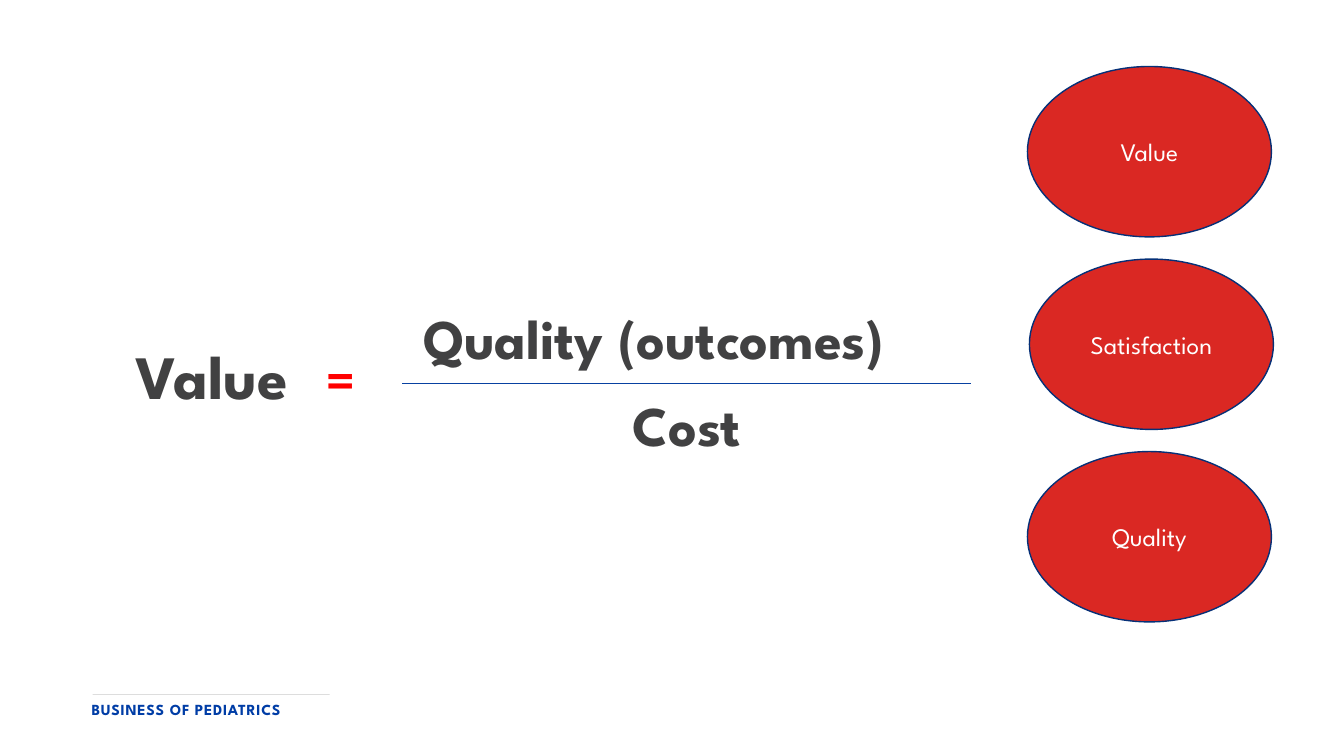
from lxml.etree import SubElement
from pptx import Presentation
from pptx.dml.color import RGBColor
from pptx.enum.shapes import MSO_CONNECTOR, MSO_SHAPE
from pptx.enum.text import MSO_ANCHOR, MSO_AUTO_SIZE, PP_ALIGN
from pptx.oxml.ns import qn
from pptx.util import Inches, Pt

GRAY = RGBColor(0x41, 0x41, 0x42)
BLUE = RGBColor(0x00, 0x3D, 0xA6)
RULE_BLUE = RGBColor(0x08, 0x41, 0xA1)
NAVY = RGBColor(0x06, 0x30, 0x77)
RED = RGBColor(0xDA, 0x28, 0x23)
BRIGHT_RED = RGBColor(0xFF, 0x00, 0x00)
WHITE = RGBColor(0xFF, 0xFF, 0xFF)
SPARTAN = "League Spartan"

LABELS = [
    ("BUSINESS OF PEDIATRICS", (0.81, 6.9, 4.74, 0.29), PP_ALIGN.LEFT, 50,
     {"size": Pt(11), "name": SPARTAN, "bold": True}, BLUE),
    ("Value", (1.25, 3.3, 2.02, 0.84), PP_ALIGN.LEFT, 0,
     {"size": Pt(44), "name": SPARTAN, "bold": True}, GRAY),
    ("Quality (outcomes)", (4.1, 2.96, 5.42, 0.77), PP_ALIGN.LEFT, 0,
     {"size": Pt(40), "name": SPARTAN, "bold": True}, GRAY),
    ("Cost", (4.1, 3.83, 5.42, 0.77), PP_ALIGN.CENTER, 0,
     {"size": Pt(40), "name": SPARTAN, "bold": True}, GRAY),
    ("=", (3.14, 3.36, 0.6, 0.77), PP_ALIGN.LEFT, 0,
     {"size": Pt(40), "name": "Calibri", "bold": True}, BRIGHT_RED),
]
RULES = [
    (0.92, 3.27, 6.89, GRAY, 0.25, 50),
    (3.99, 9.63, 3.8, RULE_BLUE, 0.5, 100),
]
GOALS = [("Value", 10.19), ("Satisfaction", 10.21), ("Quality", 10.19)]
GOAL_FORMAT = {"size": Pt(18), "name": SPARTAN, "bold": False}
GOAL_TOP, GOAL_STEP, GOAL_WIDTH, GOAL_HEIGHT = 0.66, 1.91, 2.42, 1.69


def write(frame, text, align, spacing, font_format, color):
    frame.word_wrap = True
    paragraph = frame.paragraphs[0]
    paragraph.alignment = align
    run = paragraph.add_run()
    run.text = text
    for key, value in font_format.items():
        setattr(run.font, key, value)
    run.font.color.rgb = color
    if spacing:
        run.font._element.set("spc", str(spacing))


prs = Presentation()
prs.slide_width, prs.slide_height = Inches(13.33), Inches(7.5)
slide = prs.slides.add_slide(prs.slide_layouts[6])

for left, right, y, color, width, opacity in RULES:
    rule = slide.shapes.add_connector(
        MSO_CONNECTOR.STRAIGHT, Inches(left), Inches(y), Inches(right), Inches(y))
    rule.line.color.rgb = color
    rule.line.width = Pt(width)
    properties = rule._element.spPr
    SubElement(properties, qn("a:effectLst"))
    if opacity < 100:
        tint = next(properties.iter(qn("a:srgbClr")))
        SubElement(tint, qn("a:alpha")).set("val", str(opacity * 1000))

for text, place, align, spacing, font_format, color in LABELS:
    label = slide.shapes.add_textbox(*map(Inches, place))
    write(label.text_frame, text, align, spacing, font_format, color)
    label.text_frame.auto_size = MSO_AUTO_SIZE.SHAPE_TO_FIT_TEXT

for index, (text, left) in enumerate(GOALS):
    goal = slide.shapes.add_shape(
        MSO_SHAPE.OVAL, Inches(left), Inches(GOAL_TOP + index * GOAL_STEP),
        Inches(GOAL_WIDTH), Inches(GOAL_HEIGHT))
    goal.shadow.inherit = False
    goal.fill.solid()
    goal.fill.fore_color.rgb = RED
    goal.line.color.rgb = NAVY
    goal.line.width = Pt(1)
    goal.text_frame.vertical_anchor = MSO_ANCHOR.MIDDLE
    write(goal.text_frame, text, PP_ALIGN.CENTER, 0, GOAL_FORMAT, WHITE)

prs.save("out.pptx")
